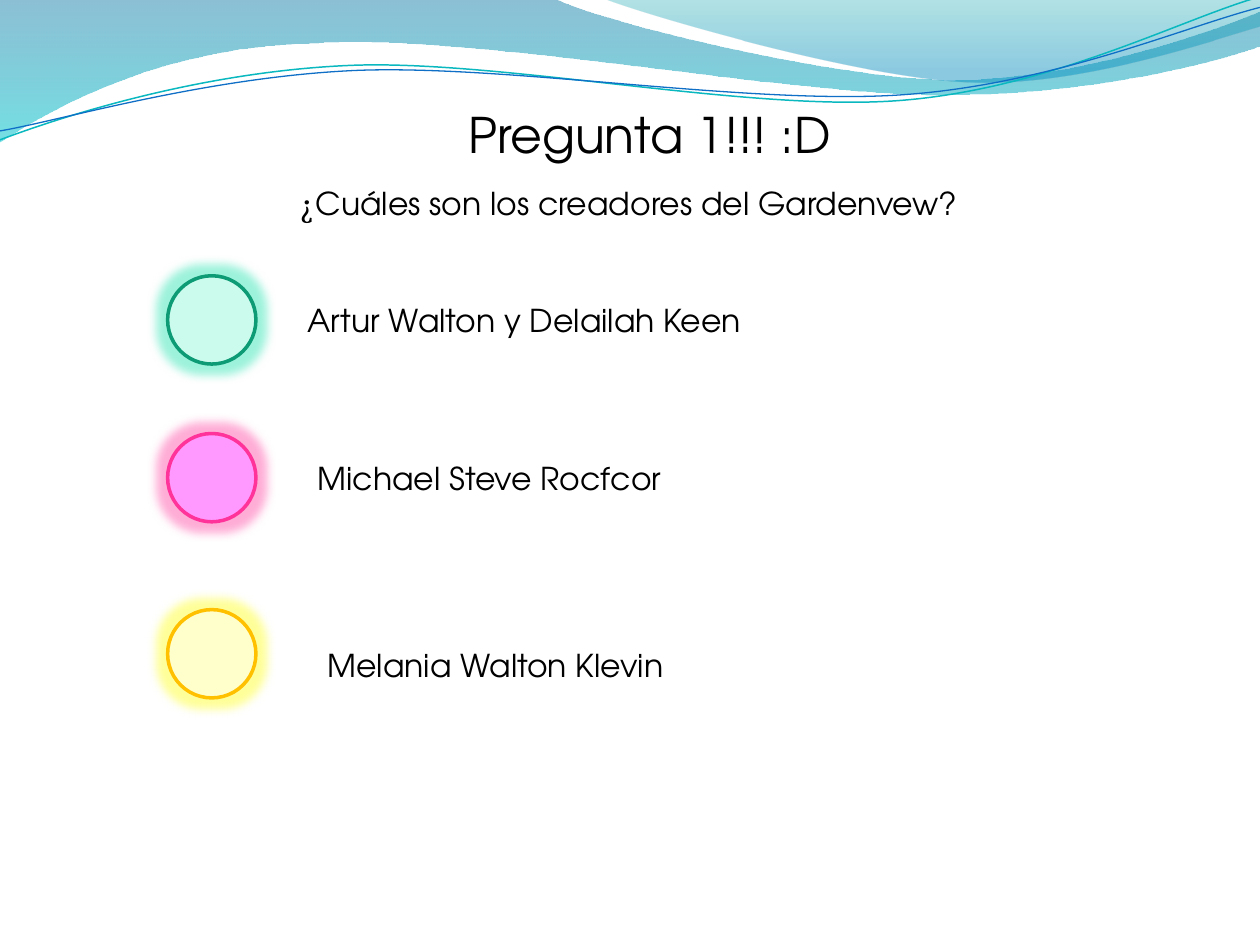
from dataclasses import dataclass

from lxml import etree
from pptx import Presentation
from pptx.dml.color import RGBColor
from pptx.enum.shapes import MSO_SHAPE
from pptx.enum.text import MSO_AUTO_SIZE, PP_ALIGN
from pptx.oxml.ns import qn
from pptx.shapes.autoshape import Shape
from pptx.slide import Slide
from pptx.util import Cm, Pt

ELLIPSE = MSO_SHAPE.OVAL
LEFT, CENTER = PP_ALIGN.LEFT, PP_ALIGN.CENTER
FIT_SHAPE = MSO_AUTO_SIZE.SHAPE_TO_FIT_TEXT

BLACK = RGBColor(0x00, 0x00, 0x00)
DEEP_BLUE = RGBColor(0x00, 0x74, 0xA1)
AQUA = RGBColor(0x00, 0xC6, 0xCF)
SEA_GREEN = RGBColor(0x00, 0xA1, 0xA9)
SKY_BLUE = RGBColor(0x00, 0x8B, 0xBF)
TEAL = RGBColor(0x0A, 0xB8, 0xBF)
BLUE = RGBColor(0x0F, 0x6F, 0xC6)
MINT = RGBColor(0xCA, 0xFB, 0xED)
GREEN = RGBColor(0x0C, 0x9B, 0x74)
BRIGHT_GREEN = RGBColor(0x0B, 0xE0, 0xA6)
PINK = RGBColor(0xFF, 0x99, 0xFF)
HOT_PINK = RGBColor(0xFF, 0x33, 0x99)
CREAM = RGBColor(0xFF, 0xFF, 0xCC)
AMBER = RGBColor(0xFF, 0xC0, 0x00)
YELLOW = RGBColor(0xFF, 0xFF, 0x00)

FONT = "TeX Gyre Adventor"
MARK_FONT = "Vollkorn"
CIRCLE_LEFT, CIRCLE_SIZE = 3.38, 1.78
LABEL_HEIGHT = 1.02

Point = tuple[float, float]
Segment = tuple[Point, ...]  # one point: straight line; three points: Bézier curve


@dataclass(frozen=True)
class GradientStop:
    position: float
    color: RGBColor
    opacity: int


@dataclass(frozen=True)
class Wave:
    start: Point
    segments: tuple[Segment, ...]
    stops: tuple[GradientStop, ...] = ()
    line_color: RGBColor | None = None
    line_width: float = 0


@dataclass(frozen=True)
class Answer:
    text: str
    left: float
    top: float
    width: float
    circle_top: float
    fill: RGBColor
    line: RGBColor
    glow: RGBColor


WAVES = (
    Wave((0, 0), (
        ((11.18, -0.03),),
        ((12.09, 0.43), (16.87, 1.6), (19.25, 1.6)),
        ((21.67, 1.6), (24.33, 0.66), (25.4, 0.23)),
        ((25.43, 0.91),),
        ((24.97, 1.12), (22.1, 1.93), (18.95, 1.91)),
        ((15.8, 1.91), (9.7, 0.71), (6.53, 0.86)),
        ((3.28, 0.91), (1.17, 2.11), (-0.03, 2.87)),
    ), stops=(GradientStop(0, DEEP_BLUE, 45), GradientStop(1, AQUA, 55))),
    Wave((12.17, -0.03), (
        ((12.93, 0.28), (17.32, 1.57), (19.53, 1.65)),
        ((21.74, 1.75), (24.41, 0.81), (25.4, 0.53)),
        ((25.4, 0),),
    ), stops=(GradientStop(0, SEA_GREEN, 30), GradientStop(0.8, SKY_BLUE, 45))),
    Wave((0, 2.82), (
        ((1.22, 2.36), (4.01, 1.45), (7.04, 1.32)),
        ((10.03, 1.19), (15.06, 2.26), (18.11, 2.03)),
        ((21.16, 1.8), (23.83, 0.38), (25.35, -0.05)),
    ), line_color=TEAL, line_width=0.85),
    Wave((0, 2.64), (
        ((1.19, 2.44), (4.17, 1.55), (7.19, 1.42)),
        ((10.24, 1.3), (15.16, 2.13), (18.21, 1.91)),
        ((21.23, 1.7), (23.9, 0.53), (25.4, 0.15)),
    ), line_color=BLUE, line_width=0.75),
)

ANSWERS = (
    Answer("Artur Walton y Delailah Keen", 5.94, 5.94, 9.42, 5.56,
           MINT, GREEN, BRIGHT_GREEN),
    Answer("Michael Steve Rocfcor", 6.15, 9.12, 7.62, 8.74,
           PINK, HOT_PINK, HOT_PINK),
    Answer("Melania Walton Klevin", 6.35, 12.9, 7.32, 12.29,
           CREAM, AMBER, YELLOW),
)


def set_opacity(color_element: etree._Element, percent: int) -> None:
    etree.SubElement(color_element, qn("a:alpha"), val=str(percent * 1000))


def bend_curves(shape: Shape, segments: tuple[Segment, ...]) -> None:
    """Merge the three line steps of each curved segment into one Bézier curve."""
    steps = list(shape._element.iter(qn("a:lnTo")))
    for segment in segments:
        group, steps = steps[:len(segment)], steps[len(segment):]
        if len(group) == 3:
            curve = etree.Element(qn("a:cubicBezTo"))
            group[0].addprevious(curve)
            for step in group:
                curve.append(step[0])
                step.getparent().remove(step)


def add_wave(slide: Slide, wave: Wave) -> None:
    builder = slide.shapes.build_freeform(*map(Cm, wave.start))
    points = [(Cm(x), Cm(y)) for segment in wave.segments for x, y in segment]
    builder.add_line_segments(points, close=bool(wave.stops))
    shape = builder.convert_to_shape()
    shape.shadow.inherit = False
    bend_curves(shape, wave.segments)
    if wave.stops:
        shape.line.fill.background()
        shape.fill.gradient()
        shape.fill.gradient_angle = 270
        for stop, target in zip(wave.stops, shape.fill.gradient_stops):
            target.position = stop.position
            target.color.rgb = stop.color
        colors = shape._element.spPr.find(qn("a:gradFill")).iter(qn("a:srgbClr"))
        for stop, color in zip(wave.stops, list(colors)):
            set_opacity(color, stop.opacity)
    else:
        shape.fill.background()
        shape.line.color.rgb = wave.line_color
        shape.line.width = Pt(wave.line_width)


def add_text(slide: Slide, text: str, *, left: float, top: float, width: float,
             height: float = LABEL_HEIGHT, size: float = 18, wrap: bool = False,
             align: PP_ALIGN = LEFT, mark: str = "") -> None:
    """Add a text box; mark is an opening sign set in its own font."""
    box = slide.shapes.add_textbox(Cm(left), Cm(top), Cm(width), Cm(height))
    frame = box.text_frame
    frame.word_wrap = wrap
    frame.auto_size = FIT_SHAPE
    paragraph = frame.paragraphs[0]
    paragraph.alignment = align
    for content, font_name in ((mark, MARK_FONT), (text, FONT)):
        if content:
            run = paragraph.add_run()
            run.text = content
            run.font.name = font_name
            run.font.size = Pt(size)
            run.font.color.rgb = BLACK


def add_answer(slide: Slide, answer: Answer) -> None:
    circle = slide.shapes.add_shape(ELLIPSE, Cm(CIRCLE_LEFT), Cm(answer.circle_top),
                                    Cm(CIRCLE_SIZE), Cm(CIRCLE_SIZE))
    circle.shadow.inherit = False
    circle.fill.solid()
    circle.fill.fore_color.rgb = answer.fill
    circle.line.color.rgb = answer.line
    circle.line.width = Pt(2)
    effects = circle._element.spPr.find(qn("a:effectLst"))
    glow = etree.SubElement(effects, qn("a:glow"), rad=str(Pt(11)))
    color = etree.SubElement(glow, qn("a:srgbClr"), val=str(answer.glow))
    set_opacity(color, 40)
    add_text(slide, answer.text, left=answer.left, top=answer.top, width=answer.width)


def main() -> None:
    presentation = Presentation()
    presentation.slide_width, presentation.slide_height = Cm(25.4), Cm(19.05)
    slide = presentation.slides.add_slide(presentation.slide_layouts[6])
    for wave in WAVES:
        add_wave(slide, wave)
    add_text(slide, "Pregunta 1!!! :D", left=5.36, top=1.98, width=15.47,
             height=3.84, size=28, wrap=True, align=CENTER)
    add_text(slide, "Cuáles son los creadores del Gardenvew?", mark="¿",
             left=5.77, top=3.58, width=13.84)
    for answer in ANSWERS:
        add_answer(slide, answer)
    presentation.save("out.pptx")


if __name__ == "__main__":
    main()
